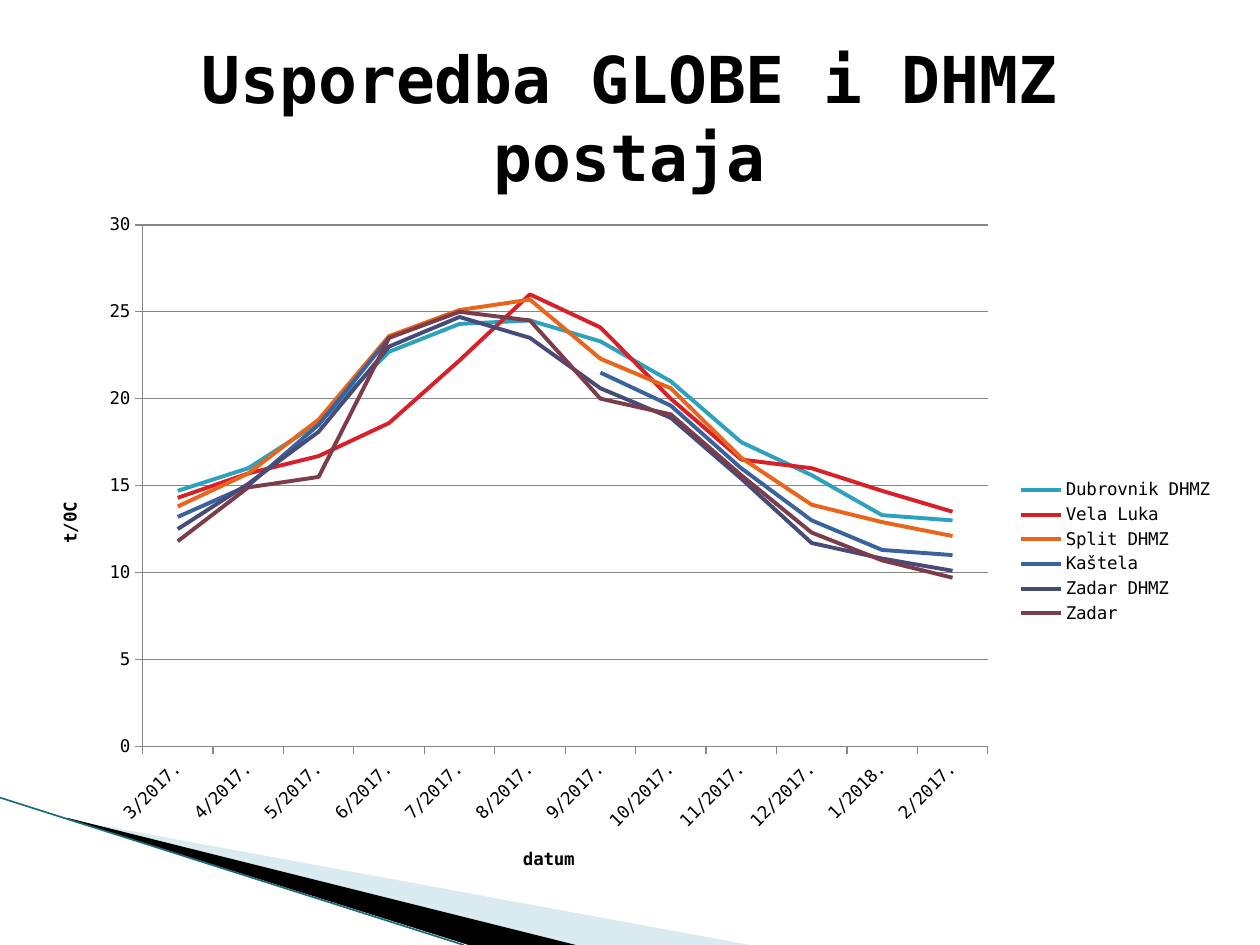
from lxml import etree
from pptx import Presentation
from pptx.chart.data import CategoryChartData
from pptx.dml.color import RGBColor
from pptx.enum.chart import XL_CHART_TYPE as ChartType
from pptx.enum.chart import XL_LEGEND_POSITION as LegendPosition
from pptx.enum.chart import XL_TICK_MARK as TickMark
from pptx.enum.shapes import MSO_CONNECTOR as Connector
from pptx.enum.text import MSO_ANCHOR as Anchor
from pptx.enum.text import PP_ALIGN as Align
from pptx.oxml import parse_xml
from pptx.oxml.ns import nsdecls, qn
from pptx.util import Pt

FONT = "DejaVu Sans Mono"
BLACK = "000000"
AXIS_GRAY = "878787"
MONTHS = [f"{month}/2017." for month in range(3, 13)] + ["1/2018.", "2/2017."]
STATIONS = [
    ("Dubrovnik DHMZ", "2DA2BF", [14.7, 16, 18.6, 22.7, 24.3, 24.5, 23.3, 21, 17.5, 15.6, 13.3, 13]),
    ("Vela Luka", "DA1F28", [14.3, 15.7, 16.7, 18.6, 22.2, 26, 24.1, 20, 16.5, 16, 14.7, 13.5]),
    ("Split DHMZ", "EB641B", [13.8, 15.7, 18.8, 23.6, 25.1, 25.7, 22.3, 20.6, 16.6, 13.9, 12.9, 12.1]),
    ("Kaštela", "39639D", [13.2, 15, 18.5, 23.5, None, None, 21.5, 19.6, 16, 13, 11.3, 11]),
    ("Zadar DHMZ", "474B78", [12.5, 15.1, 18.1, 23, 24.7, 23.5, 20.6, 18.9, 15.4, 11.7, 10.8, 10.1]),
    ("Zadar", "7D3C4A", [11.8, 14.9, 15.5, 23.5, 25, 24.5, 20, 19.1, 15.6, 12.3, 10.7, 9.7]),
]


def color(value):
    return RGBColor.from_string(value)


def style_font(font, size, bold=False):
    font.name = FONT
    font.size = Pt(size)
    font.bold = bold
    font.color.rgb = color(BLACK)


def style_line(line, value, width):
    line.color.rgb = color(value)
    line.width = Pt(width)


def add_wedge(slide, points, fill, opacity=100):
    corners = [(Pt(x), Pt(y)) for x, y in points]
    builder = slide.shapes.build_freeform(*corners[0])
    builder.add_line_segments(corners[1:], close=True)
    shape = builder.convert_to_shape()
    shape.shadow.inherit = False
    shape.fill.solid()
    shape.fill.fore_color.rgb = color(fill)
    shape.line.fill.background()
    if opacity < 100:
        fill_color = shape._element.spPr.find(qn("a:solidFill"))[0]
        etree.SubElement(fill_color, qn("a:alpha"), val=str(opacity * 1000))


def add_edge(slide, start, end, value, width):
    ends = [Pt(length) for length in (*start, *end)]
    connector = slide.shapes.add_connector(Connector.STRAIGHT, *ends)
    style_line(connector.line, value, width)
    etree.SubElement(connector._element.spPr, qn("a:effectLst"))


def add_title(slide, text):
    shape = slide.shapes.add_textbox(Pt(36), Pt(21.6), Pt(648), Pt(90))
    frame = shape.text_frame
    frame.word_wrap = True
    frame.vertical_anchor = Anchor.MIDDLE
    paragraph = frame.paragraphs[0]
    paragraph.text = text
    paragraph.alignment = Align.CENTER
    style_font(paragraph.font, 36.9, bold=True)


def style_axis(axis, title):
    axis.major_tick_mark = TickMark.OUTSIDE
    axis.minor_tick_mark = TickMark.NONE
    style_line(axis.format.line, AXIS_GRAY, 0.75)
    style_font(axis.tick_labels.font, 10)
    paragraph = axis.axis_title.text_frame.paragraphs[0]
    paragraph.text = title
    style_font(paragraph.font, 10, bold=True)


def place_plot(chart, left, top, width, height):
    plot_area = chart._chartSpace.chart.plotArea
    for layout in plot_area.findall(qn("c:layout")):
        plot_area.remove(layout)
    plot_area.insert(0, parse_xml(
        f'<c:layout {nsdecls("c")}><c:manualLayout><c:layoutTarget val="inner"/>'
        '<c:xMode val="edge"/><c:yMode val="edge"/>'
        f'<c:x val="{left}"/><c:y val="{top}"/><c:w val="{width}"/><c:h val="{height}"/>'
        '</c:manualLayout></c:layout>'))


def add_temperature_chart(slide):
    data = CategoryChartData()
    data.categories = MONTHS
    for name, _, temperatures in STATIONS:
        data.add_series(name, temperatures)
    chart = slide.shapes.add_chart(
        ChartType.LINE, Pt(20.2), Pt(116.6), Pt(680.4), Pt(397.4), data).chart
    style_font(chart.font, 10)
    chart.has_title = False
    chart.has_legend = True
    chart.legend.position = LegendPosition.RIGHT
    chart.legend.include_in_layout = False
    style_font(chart.legend.font, 10)
    chart.plots[0].vary_by_categories = False
    for series, (_, value, _) in zip(chart.plots[0].series, STATIONS):
        series.smooth = False
        style_line(series.format.line, value, 2.25)
    style_axis(chart.category_axis, "datum")
    labels = chart.category_axis._element.find(qn("c:txPr"))
    labels.find(qn("a:bodyPr")).set("rot", str(-45 * 60000))
    value_axis = chart.value_axis
    style_axis(value_axis, "t/0C")
    value_axis.minimum_scale = 0
    value_axis.maximum_scale = 30
    value_axis.major_unit = 5
    value_axis.has_major_gridlines = True
    style_line(value_axis.major_gridlines.format.line, AXIS_GRAY, 0.75)
    place_plot(chart, 0.09, 0.03, 0.71, 0.75)


def main():
    presentation = Presentation()
    presentation.slide_width = Pt(720)
    presentation.slide_height = Pt(540)
    slide = presentation.slides.add_slide(presentation.slide_layouts[6])
    add_wedge(slide, [(39.6, 468.4), (428.4, 540), (328.3, 540), (39.6, 468)], "A0CBDC", 40)
    add_wedge(slide, [(38.2, 467.3), (329, 540), (267.8, 540), (38.9, 468)], BLACK)
    add_edge(slide, (0, 455.8), (265, 540), "1B6B7D", 0.95)
    add_title(slide, "Usporedba GLOBE i DHMZ postaja")
    add_temperature_chart(slide)
    presentation.save("out.pptx")


if __name__ == "__main__":
    main()
